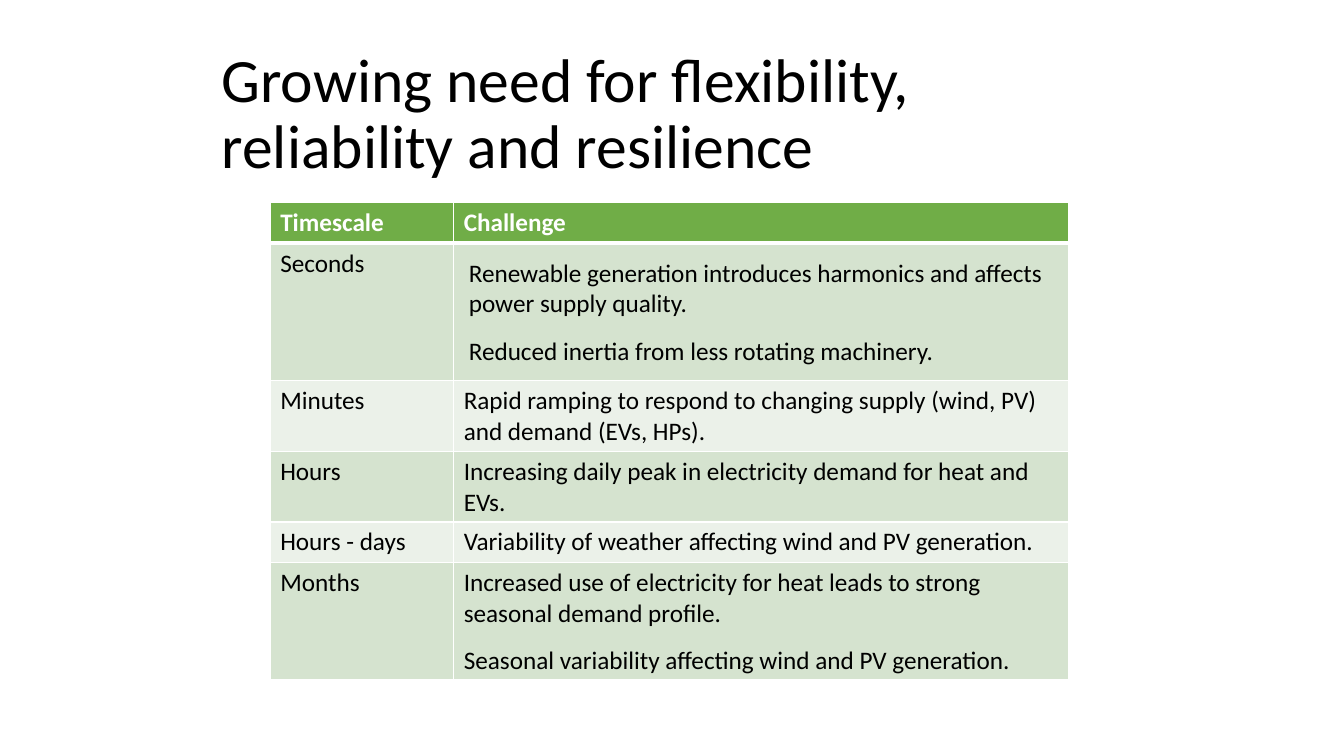
from dataclasses import dataclass

from lxml import etree
from pptx import Presentation
from pptx.dml.color import RGBColor
from pptx.enum.text import MSO_ANCHOR
from pptx.oxml.ns import qn
from pptx.util import Inches, Pt

MIDDLE = MSO_ANCHOR.MIDDLE


@dataclass(frozen=True)
class Theme:
    font: str = "Calibri"
    title_size: int = 44
    table_size: int = 18
    text: str = "000000"
    white: str = "FFFFFF"
    header: str = "70AD47"
    bands: tuple = ("D5E3CF", "EBF1E9")
    grid_width: float = 1
    header_rule: float = 3


THEME = Theme()

TITLE = "Growing need for flexibility, reliability and resilience"
HEADINGS = ("Timescale", ["Challenge"])
# Timescale, challenges, row height
CHALLENGES = [
    ("Seconds", ["Renewable generation introduces harmonics and affects power supply quality.",
                 "Reduced inertia from less rotating machinery."], 1.27),
    ("Minutes", ["Rapid ramping to respond to changing supply (wind, PV) and demand (EVs, HPs)."], 0.65),
    ("Hours", ["Increasing daily peak in electricity demand for heat and EVs."], 0.65),
    ("Hours - days", ["Variability of weather affecting wind and PV generation."], 0.38),
    ("Months", ["Increased use of electricity for heat leads to strong seasonal demand profile.",
                "Seasonal variability affecting wind and PV generation."], 0.65),
]
HEADER_HEIGHT = 0.38
COLUMN_WIDTHS = (1.82, 6.1)
WIDE_INSET = 0.15


def add_run(p, text, size, color, bold=False):
    r = p.add_run()
    r.text = text
    r.font.name = THEME.font
    r.font.size = Pt(size)
    r.font.bold = bold
    r.font.color.rgb = RGBColor.from_string(color)


def add_title(slide, text):
    tb = slide.shapes.add_textbox(Inches(2.1), Inches(0.52), Inches(8.5), Inches(1.25))
    tf = tb.text_frame
    tf.word_wrap = True
    tf.vertical_anchor = MIDDLE
    p = tf.paragraphs[0]
    p.line_spacing = 0.9
    add_run(p, text, THEME.title_size, THEME.text)


def set_borders(cell, top, bottom):
    tc_pr = cell._tc.get_or_add_tcPr()
    sides = {"L": THEME.grid_width, "R": THEME.grid_width, "T": top, "B": bottom}
    for i, (side, width) in enumerate(sides.items()):
        ln = etree.Element(qn(f"a:ln{side}"), w=str(Pt(width)))
        fill = etree.SubElement(ln, qn("a:solidFill"))
        etree.SubElement(fill, qn("a:srgbClr"), val=THEME.white)
        tc_pr.insert(i, ln)


def fill_cell(cell, paragraphs, fill, color, bold):
    cell.fill.solid()
    cell.fill.fore_color.rgb = RGBColor.from_string(fill)
    tf = cell.text_frame
    for i, text in enumerate(paragraphs):
        p = tf.add_paragraph() if i else tf.paragraphs[0]
        p.space_after = Pt(12)
        add_run(p, text, THEME.table_size, color, bold)


def add_challenge_table(slide):
    rows = [(*HEADINGS, HEADER_HEIGHT), *CHALLENGES]
    height = sum(row[2] for row in rows)
    frame = slide.shapes.add_table(len(rows), len(COLUMN_WIDTHS), Inches(2.68), Inches(2.01),
                                   Inches(sum(COLUMN_WIDTHS)), Inches(height))
    table = frame.table
    for column, width in zip(table.columns, COLUMN_WIDTHS):
        column.width = Inches(width)

    for i, (timescale, challenges, row_height) in enumerate(rows):
        table.rows[i].height = Inches(row_height)
        is_header = i == 0
        fill = THEME.header if is_header else THEME.bands[(i - 1) % 2]
        color = THEME.white if is_header else THEME.text
        top = THEME.header_rule if i == 1 else THEME.grid_width
        bottom = THEME.header_rule if is_header else THEME.grid_width
        for j, paragraphs in enumerate(([timescale], challenges)):
            cell = table.cell(i, j)
            fill_cell(cell, paragraphs, fill, color, is_header)
            set_borders(cell, top, bottom)

    # Wider margins around the first challenge
    cell = table.cell(1, 1)
    cell.margin_left = cell.margin_right = Inches(WIDE_INSET)
    cell.margin_top = cell.margin_bottom = Inches(WIDE_INSET)


def main():
    prs = Presentation()
    prs.slide_width, prs.slide_height = Inches(13.33), Inches(7.5)
    slide = prs.slides.add_slide(prs.slide_layouts[6])
    add_title(slide, TITLE)
    add_challenge_table(slide)
    prs.save("out.pptx")


if __name__ == "__main__":
    main()
